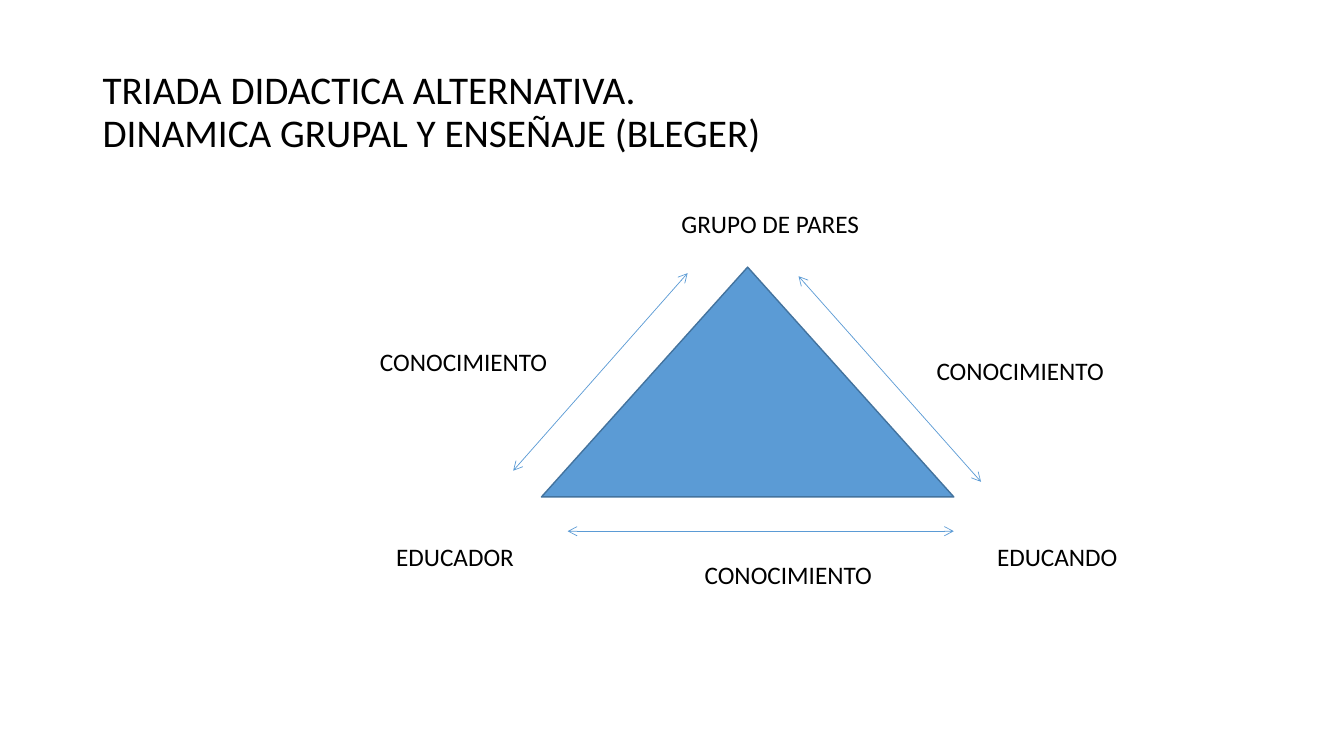
from dataclasses import dataclass

from lxml import etree
from pptx import Presentation
from pptx.dml.color import RGBColor
from pptx.enum.shapes import MSO_CONNECTOR, MSO_SHAPE
from pptx.enum.text import MSO_ANCHOR, MSO_AUTO_SIZE
from pptx.oxml.ns import qn
from pptx.util import Inches, Pt

STRAIGHT = MSO_CONNECTOR.STRAIGHT
TRIANGLE = MSO_SHAPE.ISOSCELES_TRIANGLE
ANCHOR_TOP, ANCHOR_MIDDLE = MSO_ANCHOR.TOP, MSO_ANCHOR.MIDDLE
GROW = MSO_AUTO_SIZE.SHAPE_TO_FIT_TEXT


@dataclass(frozen=True)
class Theme:
    """Colours, font and sizes shared by the slide."""
    font: str = "Calibri"
    text: RGBColor = RGBColor(0x00, 0x00, 0x00)
    accent: RGBColor = RGBColor(0x5B, 0x9B, 0xD5)
    outline: RGBColor = RGBColor(0x43, 0x73, 0x9E)
    title_size: Pt = Pt(28)
    label_size: Pt = Pt(18)
    outline_width: Pt = Pt(1)
    arrow_width: Pt = Pt(0.5)


THEME = Theme()
TITLE_LINES = ["TRIADA DIDACTICA ALTERNATIVA.", "DINAMICA GRUPAL Y ENSEÑAJE (BLEGER)"]
TRIANGLE_BOX = (1.7, 0.63, 4.09, 2.28)
ARROWS = [
    ((1.42, 2.65), (3.15, 0.69)),
    ((4.25, 0.72), (6.06, 2.76)),
    ((1.96, 3.25), (5.79, 3.25)),
]
LABELS = [
    ("GRUPO DE PARES", 2.99, 0, 1.98),
    ("EDUCADOR", 0.16, 3.3, 1.38),
    ("EDUCANDO", 6.12, 3.3, 1.41),
    ("CONOCIMIENTO", 0, 1.37, 1.88),
    ("CONOCIMIENTO", 5.52, 1.46, 1.88),
    ("CONOCIMIENTO", 3.22, 3.48, 1.88),
]


def add_text(slide, box, lines, size, anchor=ANCHOR_TOP):
    """Add a text box holding one paragraph with the given lines."""
    shape = slide.shapes.add_textbox(*(Inches(length) for length in box))
    frame = shape.text_frame
    frame.vertical_anchor = anchor
    paragraph = frame.paragraphs[0]
    for index, line in enumerate(lines):
        if index:
            paragraph.add_line_break()
        run = paragraph.add_run()
        run.text = line
        run.font.name = THEME.font
        run.font.size = size
        run.font.color.rgb = THEME.text
    return shape


def add_double_arrow(slide, start, end):
    """Add a thin straight line with an open arrowhead at both ends."""
    points = (Inches(length) for length in (*start, *end))
    connector = slide.shapes.add_connector(STRAIGHT, *points)
    connector.line.color.rgb = THEME.accent
    connector.line.width = THEME.arrow_width
    properties = connector._element.spPr
    line = properties.find(qn("a:ln"))
    for tag in ("a:headEnd", "a:tailEnd"):
        etree.SubElement(line, qn(tag), type="arrow")
    etree.SubElement(properties, qn("a:effectLst"))


def add_title(slide, box):
    """Add the two-line title, centred vertically in its box."""
    shape = add_text(slide, box, TITLE_LINES, THEME.title_size, ANCHOR_MIDDLE)
    shape.text_frame.word_wrap = True
    shape.text_frame.paragraphs[0].line_spacing = 0.9


def add_triad(slide, left, top):
    """Add the triangle with its arrows and labels from a top-left corner."""
    x, y, width, height = TRIANGLE_BOX
    triangle = slide.shapes.add_shape(
        TRIANGLE, Inches(left + x), Inches(top + y), Inches(width), Inches(height))
    triangle.shadow.inherit = False
    triangle.fill.solid()
    triangle.fill.fore_color.rgb = THEME.accent
    triangle.line.color.rgb = THEME.outline
    triangle.line.width = THEME.outline_width
    for ends in ARROWS:
        start, end = ((left + x, top + y) for x, y in ends)
        add_double_arrow(slide, start, end)
    for label, x, y, width in LABELS:
        box = (left + x, top + y, width, 0.4)
        shape = add_text(slide, box, [label], THEME.label_size)
        shape.text_frame.word_wrap = False
        shape.text_frame.auto_size = GROW


def main():
    """Build the slide and save it."""
    presentation = Presentation()
    presentation.slide_width = Inches(13.33)
    presentation.slide_height = Inches(7.5)
    slide = presentation.slides.add_slide(presentation.slide_layouts[6])
    add_title(slide, (0.92, 0.4, 11.5, 1.45))
    add_triad(slide, 3.67, 2.02)
    presentation.save("out.pptx")


if __name__ == "__main__":
    main()
